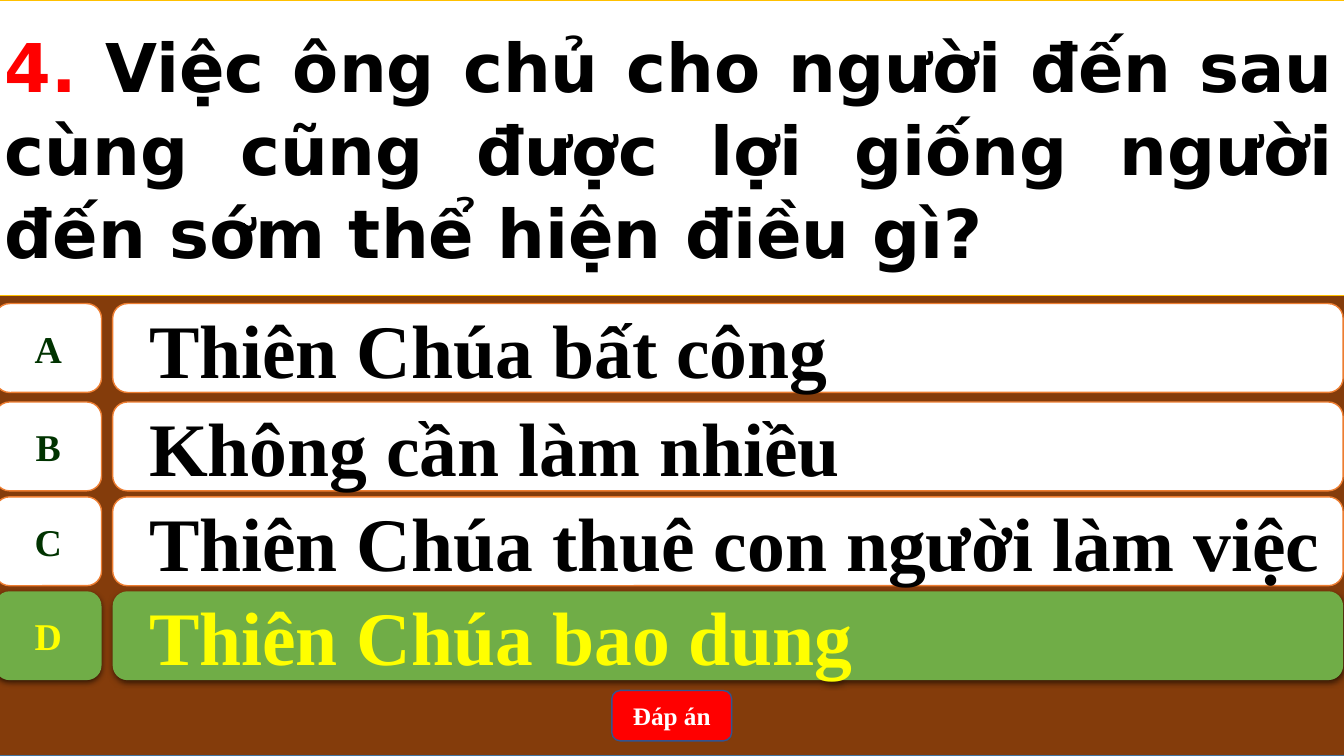
from lxml import etree
from pptx import Presentation
from pptx import util as u
from pptx.dml import color
from pptx.enum import shapes, text
from pptx.oxml import ns

COLORS = {
    "brown": "843C0B", "steel": "43739E", "white": "FFFFFF", "orange": "ED7D31",
    "forest": "003300", "black": "000000", "green": "70AD47", "yellow": "FFFF00",
    "red": "FF0000", "navy": "325491", "gold": "FFC000",
}
SHAPE = shapes.MSO_SHAPE
ALIGN = text.PP_ALIGN
SERIF = "Times New Roman"
EDGE, FULL_W = -0.13, 34.01
LABEL_W, ANSWER_X, ANSWER_W, ROW_H = 2.69, 2.84, 31.01, 2.24
ANSWERS = [
    ("A", "Thiên Chúa bất công", 7.65, False),
    ("B", "Không cần làm nhiều", 10.13, False),
    ("C", "Thiên Chúa thuê con người làm việc", 12.52, False),
    ("D", "Thiên Chúa bao dung", 14.9, True),
]


def rgb(name):
    return color.RGBColor.from_string(COLORS[name])


class QuizSlide:
    def __init__(self, prs):
        self.s = prs.slides.add_slide(prs.slide_layouts[6])

    def box(self, kind, at, fill, line=None, weight=1, parent=None):
        sp = (parent or self.s).shapes.add_shape(kind, *map(u.Cm, at))
        sp.shadow.inherit = False
        sp.fill.solid()
        sp.fill.fore_color.rgb = rgb(fill)
        if line:
            sp.line.color.rgb = rgb(line)
            sp.line.width = u.Pt(weight)
        else:
            sp.line.fill.background()
        return sp

    def words(self, sp, runs, size, font=SERIF, wrap=True, **paragraph):
        tf = sp.text_frame
        tf.word_wrap = wrap
        tf.vertical_anchor = text.MSO_ANCHOR.MIDDLE
        p = tf.paragraphs[0]
        for name, value in paragraph.items():
            setattr(p, name, value)
        style = {"name": font, "size": u.Pt(size), "bold": True}
        for content, shade in runs:
            r = p.add_run()
            r.text = content
            for name, value in style.items():
                setattr(r.font, name, value)
            r.font.color.rgb = rgb(shade)
        return p

    def shadow(self, sp):
        effects = sp._element.spPr.find(ns.qn("a:effectLst"))
        outer = etree.SubElement(effects, ns.qn("a:outerShdw"), blurRad=str(u.Pt(4.5)),
                                 dist=str(u.Pt(1.5)), dir="5400000", rotWithShape="0")
        shade = etree.SubElement(outer, ns.qn("a:srgbClr"), val=COLORS["black"])
        etree.SubElement(shade, ns.qn("a:alpha"), val="63000")

    def answer(self, letter, content, top, correct):
        row = self.s.shapes.add_group_shape()
        fill, line = ("green", None) if correct else ("white", "orange")
        letter_color, answer_color = ("yellow", "yellow") if correct else ("forest", "black")
        label = self.box(SHAPE.FLOWCHART_ALTERNATE_PROCESS,
                         (EDGE, top, LABEL_W, ROW_H), fill, line, parent=row)
        self.words(label, [(letter, letter_color)], 27, wrap=False, alignment=ALIGN.CENTER)
        bar = self.box(SHAPE.ROUNDED_RECTANGLE,
                       (ANSWER_X, top, ANSWER_W, ROW_H), fill, line, parent=row)
        p = self.words(bar, [(content, answer_color)], 54, alignment=ALIGN.LEFT, level=1)
        pPr = p._p.get_or_add_pPr()
        pPr.set("marL", str(u.Cm(1.27)))
        pPr.set("indent", str(u.Cm(-0.71)))
        if correct:
            for sp in (label, bar):
                self.shadow(sp)

    def button(self, content, at):
        sp = self.box(SHAPE.ROUNDED_RECTANGLE, at, "red", "navy")
        self.words(sp, [(content, "white")], 18, alignment=ALIGN.CENTER)

    def question(self, number, content, at):
        sp = self.box(SHAPE.RECTANGLE, at, "white", "gold", 0.5)
        self.words(sp, [(number, "red"), (content, "black")], 48, "DejaVu Sans",
                   alignment=ALIGN.JUSTIFY, line_spacing=1.03)


def main():
    prs = Presentation()
    prs.slide_width, prs.slide_height = u.Cm(33.87), u.Cm(19.05)
    quiz = QuizSlide(prs)
    quiz.box(SHAPE.RECTANGLE, (EDGE, 0, FULL_W, 19.05), "brown", "steel")
    for row in ANSWERS:
        quiz.answer(*row)
    quiz.button("Đáp án", (15.42, 17.4, 3.02, 1.27))
    quiz.question("4. ", "Việc ông chủ cho người đến sau cùng cũng được lợi "
                  "giống người đến sớm thể hiện điều gì?", (EDGE, 0, FULL_W, 7.44))
    prs.save("out.pptx")


if __name__ == "__main__":
    main()
